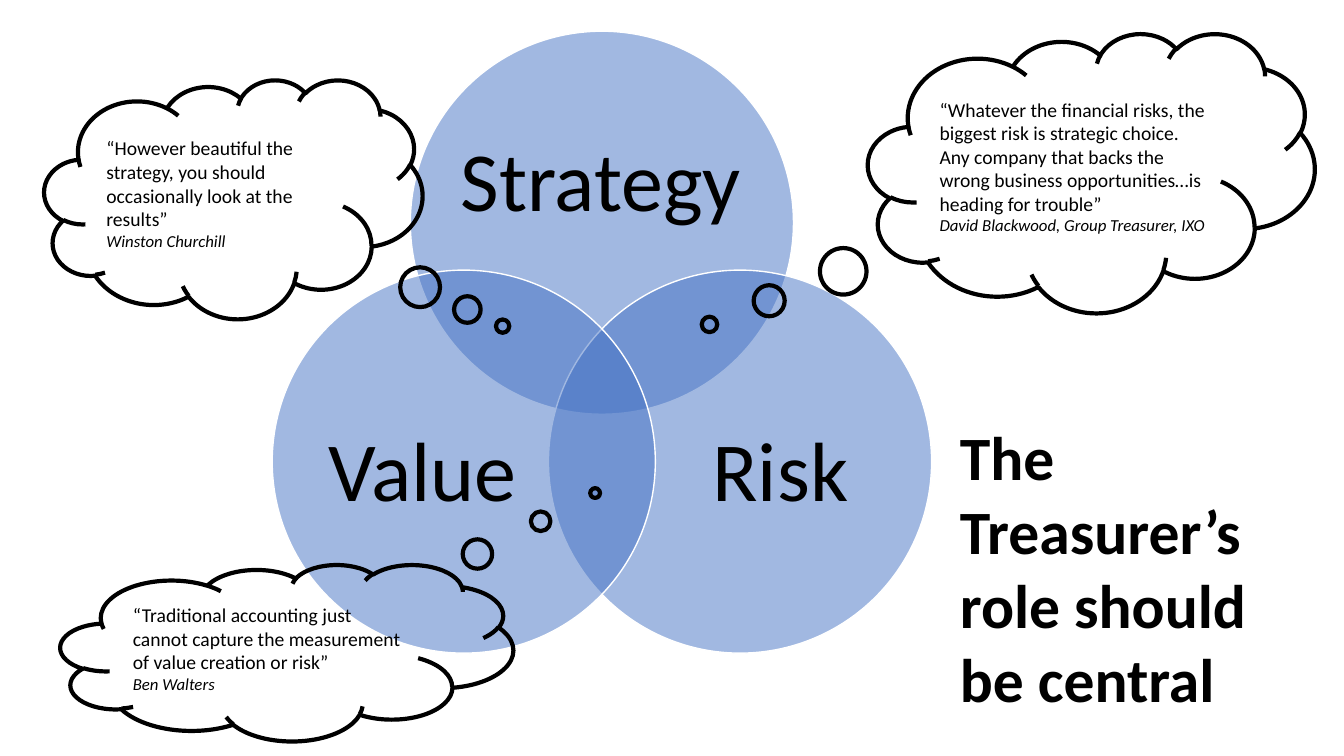
from pptx import Presentation
from pptx.dml.color import RGBColor
from pptx.enum import shapes, text
from pptx.oxml import ns
from pptx.util import Inches, Pt
from lxml import etree

COLORS = {"circle": "4472C4", "edge": "FFFFFF", "ink": "000000"}
DIAMETER = 3.8


def color(name):
    return RGBColor.from_string(COLORS[name])


def style(paragraph, size, bold=False, italic=False):
    for run in paragraph.runs:
        run.font.name = "Calibri"
        run.font.size = Pt(size)
        run.font.bold = bold
        run.font.italic = italic
        run.font.color.rgb = color("ink")


prs = Presentation()
prs.slide_width = Inches(13.33)
prs.slide_height = Inches(7.5)
slide = prs.slides.add_slide(prs.slide_layouts[5])

message = slide.shapes.title
message.left, message.top = Inches(9.42), Inches(4.11)
message.width, message.height = Inches(3.62), Inches(3.06)
message.text_frame.text = "The Treasurer’s role should be central"
message.text_frame.word_wrap = True
message.text_frame.auto_size = text.MSO_AUTO_SIZE.NONE
message.text_frame.vertical_anchor = text.MSO_ANCHOR.TOP
message.text_frame.paragraphs[0].alignment = text.PP_ALIGN.LEFT
style(message.text_frame.paragraphs[0], 44, bold=True)

themes = [
    ("Strategy", (4.07, 0.31), (4.46, 0.97, 3, 1.71)),
    ("Risk", (5.44, 2.68), (6.6, 3.66, 2.28, 2.09)),
    ("Value", (2.7, 2.68), (3.05, 3.66, 2.28, 2.09)),
]
for theme, (left, top), label_box in themes:
    circle = slide.shapes.add_shape(
        shapes.MSO_SHAPE.OVAL, Inches(left), Inches(top), Inches(DIAMETER), Inches(DIAMETER)
    )
    circle.shadow.inherit = False
    circle.fill.solid()
    circle.fill.fore_color.rgb = color("circle")
    fill_color = circle.fill._xPr.find(ns.qn("a:solidFill"))[0]
    etree.SubElement(fill_color, ns.qn("a:alpha"), val="50000")
    circle.line.color.rgb = color("edge")
    circle.line.width = Pt(1)

    label = slide.shapes.add_textbox(*[Inches(n) for n in label_box]).text_frame
    label.text = theme
    label.word_wrap = True
    label.vertical_anchor = text.MSO_ANCHOR.MIDDLE
    label.margin_left = label.margin_right = label.margin_top = label.margin_bottom = 0
    label.paragraphs[0].alignment = text.PP_ALIGN.CENTER
    label.paragraphs[0].line_spacing = 0.9
    label.paragraphs[0].space_after = Pt(21)
    style(label.paragraphs[0], 60)

quotes = [
    (
        "“Whatever the financial risks, the biggest risk is strategic choice. Any company "
        "that backs the wrong business opportunities…is heading for trouble”",
        "David Blackwood, Group Treasurer, IXO",
        (8.61, 0.33, 4.43, 2.77),
        (-0.855, 0.543),
    ),
    (
        "“However beautiful the strategy, you should occasionally look at the results”",
        "Winston Churchill",
        (0.44, 0.79, 3.75, 2.37),
        (0.712, 0.532),
    ),
    (
        "“Traditional accounting just cannot capture the measurement of value creation or risk”",
        "Ben Walters",
        (0.6, 5.6, 4.49, 1.75),
        (0.681, -0.905),
    ),
]
for quote, speaker, cloud_box, tail in quotes:
    cloud = slide.shapes.add_shape(
        shapes.MSO_SHAPE.CLOUD_CALLOUT, *[Inches(n) for n in cloud_box]
    )
    cloud.adjustments[0], cloud.adjustments[1] = tail
    cloud.shadow.inherit = False
    cloud.fill.background()
    cloud.line.color.rgb = color("ink")
    cloud.line.width = Pt(3)
    cloud.text_frame.text = f"{quote}\n{speaker}"
    cloud.text_frame.word_wrap = True
    cloud.text_frame.vertical_anchor = text.MSO_ANCHOR.MIDDLE
    saying, credit = cloud.text_frame.paragraphs
    saying.alignment = credit.alignment = text.PP_ALIGN.LEFT
    style(saying, 14)
    style(credit, 12, italic=True)

prs.save("out.pptx")
